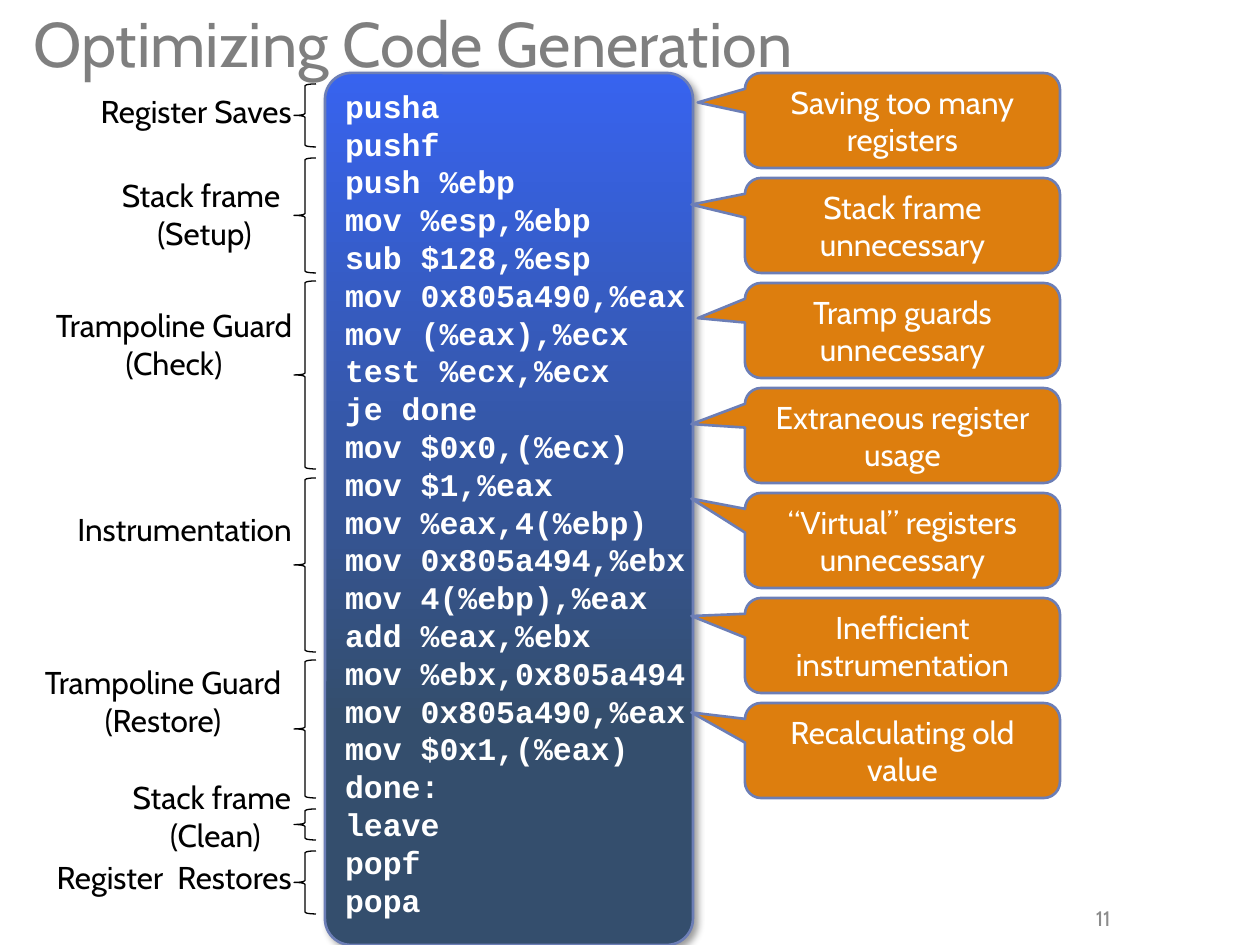
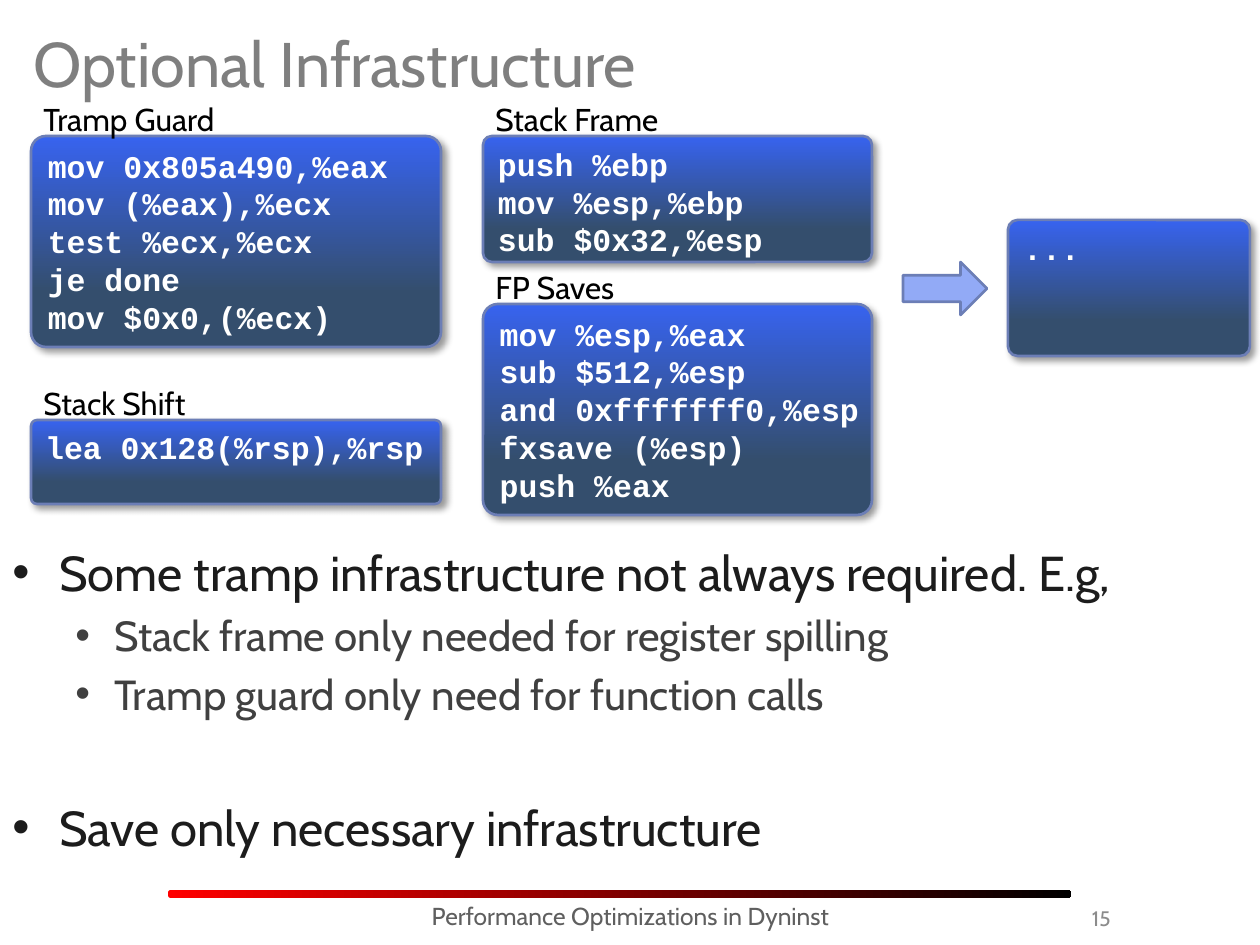
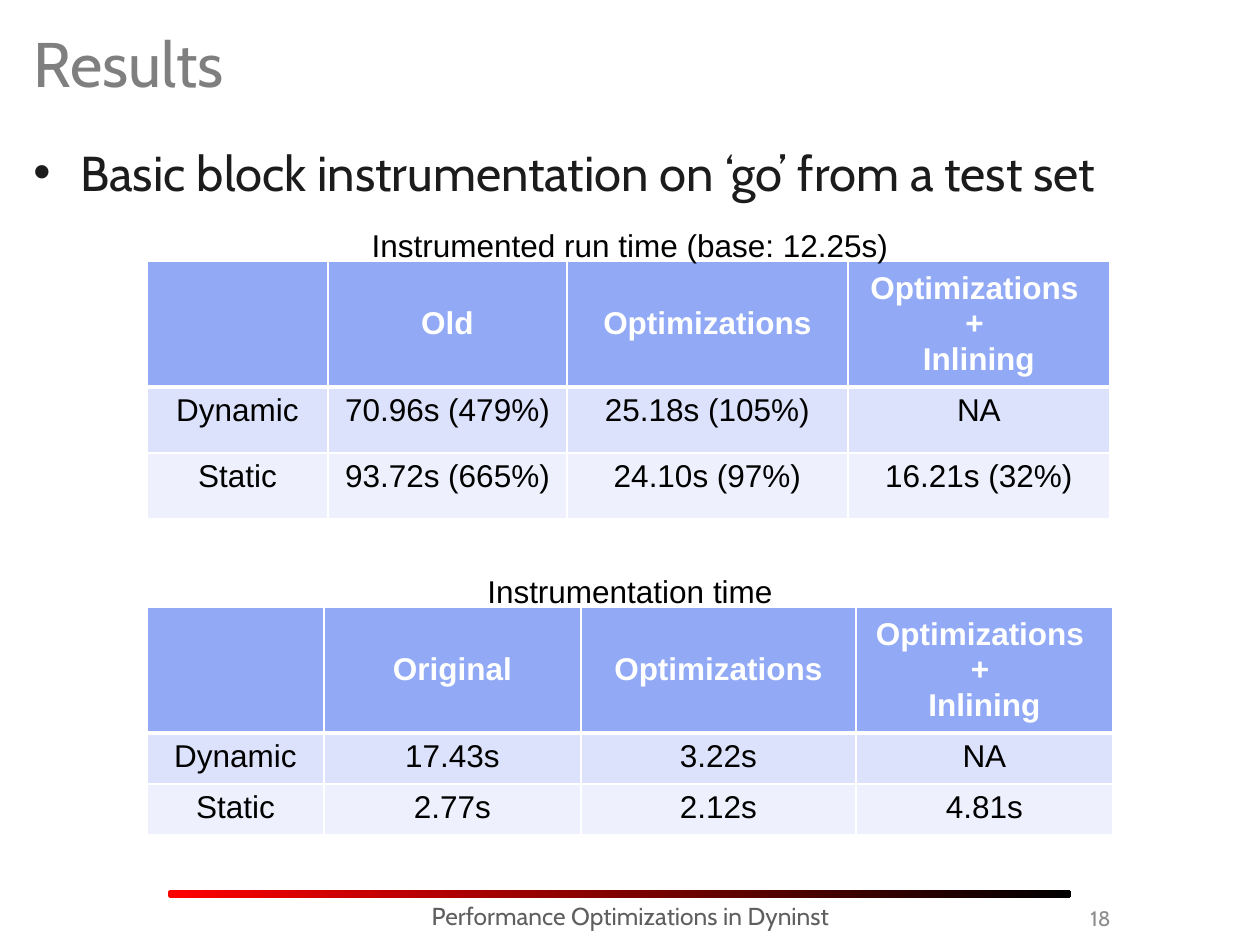
import pptx
import pptx.util
import pptx.dml.color
import pptx.enum.shapes
import pptx.enum.text
import pptx.oxml
import pptx.oxml.ns

EMU_PER_PX = 914400 / 126
SHAPES = pptx.enum.shapes.MSO_SHAPE
ALIGN = pptx.enum.text.PP_ALIGN
ANCHOR = pptx.enum.text.MSO_ANCHOR

BLACK, WHITE, OUTLINE, ORANGE = "000000", "FFFFFF", "6C7EB6", "DD7E0E"
HEADER_FILL, ROW_FILLS = "92AAF6", ("DCE2FB", "EEF1FD")
CODE_STOPS = ((0, "3763EF"), (0.74, "344E6D"))
BAR_STOPS = ((0, "FF0000"), (1, BLACK))

# Text formats: every key but color is a font attribute
TITLE = {"name": "Cabin", "size": 36, "color": "7F7F7F"}
NUMBER = {"name": "Cabin", "size": 12, "color": "8C8C8C"}
FOOTER = {"name": "Cabin", "size": 14, "color": "5F5F5F"}
LABEL = {"name": "Cabin", "size": 18, "color": BLACK}
CALLOUT = {**LABEL, "color": WHITE}
CODE = {"name": "Courier New", "size": 18, "bold": True, "color": WHITE}
TABLE_BODY = {"name": "Arial", "size": 18, "bold": False, "color": BLACK}
TABLE_HEADER = {**TABLE_BODY, "bold": True, "color": WHITE}
BULLETS = (
    {"name": "Cabin", "size": 28, "color": "1C1C1C"},
    {"name": "Cabin", "size": 24, "color": "404040"},
)
BULLET_INDENTS = ((47, 47), (102, 39))


def px(length):
    return pptx.util.Emu(round(length * EMU_PER_PX))


def color(hex_string):
    return pptx.dml.color.RGBColor.from_string(hex_string)


def draw_xml(tag, attributes="", content=""):
    namespace = pptx.oxml.ns.nsdecls("a")
    return pptx.oxml.parse_xml(f"<a:{tag} {namespace} {attributes}>{content}</a:{tag}>")


def add_run(paragraph, text, text_format):
    run = paragraph.add_run()
    run.text = text
    for name, value in text_format.items():
        if name == "color":
            run.font.color.rgb = color(value)
        else:
            setattr(run.font, name, pptx.util.Pt(value) if name == "size" else value)


def write_lines(frame, lines, text_format, align=ALIGN.LEFT):
    for index, line in enumerate(lines):
        paragraph = frame.add_paragraph() if index else frame.paragraphs[0]
        paragraph.alignment = align
        add_run(paragraph, line, text_format)


def add_text(slide, box, lines, text_format, align=ALIGN.LEFT, anchor=ANCHOR.TOP):
    frame = slide.shapes.add_textbox(*map(px, box)).text_frame
    frame.word_wrap = True
    frame.vertical_anchor = anchor
    write_lines(frame, lines, text_format, align)
    return frame


def add_shape(slide, kind, box, adjustments=(), fill=None, line=None, width=1.5):
    """Fill is a hex string, or None for no fill."""
    shape = slide.shapes.add_shape(kind, *map(px, box))
    shape.shadow.inherit = False
    for index, value in enumerate(adjustments):
        shape.adjustments[index] = value
    if fill:
        shape.fill.solid()
        shape.fill.fore_color.rgb = color(fill)
    else:
        shape.fill.background()
    if line:
        shape.line.color.rgb = color(line)
        shape.line.width = pptx.util.Pt(width)
    else:
        shape.line.fill.background()
    return shape


def fill_gradient(shape, stops, angle):
    shape.fill.gradient()
    shape.fill.gradient_angle = angle
    for stop, (position, hex_string) in zip(shape.fill.gradient_stops, stops):
        stop.position = position
        stop.color.rgb = color(hex_string)


# Shared slide parts
def start_slide(presentation, title, number, title_top=10, footer=True):
    slide = presentation.slides.add_slide(presentation.slide_layouts[6])
    if footer:
        bar = add_shape(slide, SHAPES.ROUNDED_RECTANGLE, (168, 890, 903, 8), (0.33,))
        fill_gradient(bar, BAR_STOPS, 0)
        add_text(slide, (305, 895, 651, 50), ["Performance Optimizations in Dyninst"],
                 FOOTER, ALIGN.CENTER)
    add_text(slide, (21, title_top, 1218, 105), [title], TITLE, anchor=ANCHOR.MIDDLE)
    add_text(slide, (955, 892, 168, 53), [str(number)], NUMBER, ALIGN.RIGHT, ANCHOR.MIDDLE)
    return slide


def add_code_box(slide, box, lines):
    shape = add_shape(slide, SHAPES.ROUNDED_RECTANGLE, box, (0.071,), line=OUTLINE)
    fill_gradient(shape, CODE_STOPS, 270)
    effects = shape._element.spPr.find(pptx.oxml.ns.qn("a:effectLst"))
    effects.append(draw_xml(
        "outerShdw", 'blurRad="50800" dist="38100" dir="2700000" algn="tl" rotWithShape="0"',
        f'<a:srgbClr val="{BLACK}"><a:alpha val="40000"/></a:srgbClr>'))
    frame = shape.text_frame
    frame.word_wrap = False
    frame.vertical_anchor = ANCHOR.TOP
    write_lines(frame, lines, CODE)


def add_bullets(slide, box, items):
    """Items are (level, text, points before)."""
    frame = add_text(slide, box, [], BULLETS[0])
    for index, (level, text, before) in enumerate(items):
        paragraph = frame.add_paragraph() if index else frame.paragraphs[0]
        margin, hanging = BULLET_INDENTS[level]
        properties = paragraph._p.get_or_add_pPr()
        properties.set("marL", str(px(margin)))
        properties.set("indent", str(-px(hanging)))
        properties.append(draw_xml("buFont", 'typeface="Arial"'))
        properties.append(draw_xml("buChar", 'char="•"'))
        paragraph.level = level
        paragraph.alignment = ALIGN.LEFT
        if before:
            paragraph.space_before = pptx.util.Pt(before)
        add_run(paragraph, text, BULLETS[level])


# Code generation slide
CODE_LINES = [
    "pusha", "pushf", "push %ebp", "mov %esp,%ebp", "sub $128,%esp",
    "mov 0x805a490,%eax", "mov (%eax),%ecx", "test %ecx,%ecx", "je done",
    "mov $0x0,(%ecx)", "mov $1,%eax", "mov %eax,4(%ebp)", "mov 0x805a494,%ebx",
    "mov 4(%ebp),%eax", "add %eax,%ebx", "mov %ebx,0x805a494", "mov 0x805a490,%eax",
    "mov $0x1,(%eax)", "done:", "leave", "popf", "popa",
]
# Brace top and height, label box, label lines
CODE_SECTIONS = [
    (84, 63, (10, 86, 294, 50), ["Register Saves"]),
    (158, 115, (105, 170, 199, 89), ["Stack frame ", "(Setup)"]),
    (281, 188, (32, 300, 284, 89), ["Trampoline Guard", "(Check)"]),
    (478, 174, (10, 504, 294, 50), ["Instrumentation"]),
    (660, 138, (21, 657, 284, 89), ["Trampoline Guard", "(Restore)"]),
    (809, 31, (116, 772, 199, 89), ["Stack frame ", "(Clean)"]),
    (851, 63, (10, 852, 294, 50), ["Register  Restores"]),
]
# Callout text and pointer tip as a share of the callout's size
CODE_PROBLEMS = [
    ("Saving too many registers", -0.65, -0.19),
    ("Stack frame unnecessary", -0.67, -0.22),
    ("Tramp guards unnecessary", -0.65, -0.13),
    ("Extraneous register usage", -0.67, -0.12),
    ("“Virtual” registers unnecessary", -0.67, -0.44),
    ("Inefficient instrumentation", -0.67, -0.31),
    ("Recalculating old value", -0.67, -0.4),
]


def add_sections(slide, left):
    for top, height, label_box, lines in CODE_SECTIONS:
        add_shape(slide, SHAPES.LEFT_BRACE, (left, top, 22, height), line=BLACK, width=0.75)
        align = ALIGN.CENTER if len(lines) > 1 else ALIGN.RIGHT
        add_text(slide, label_box, lines, LABEL, align)


def add_callouts(slide, left, top, width, height, pitch):
    for index, (text, tip_x, tip_y) in enumerate(CODE_PROBLEMS):
        shape = add_shape(slide, SHAPES.ROUNDED_RECTANGULAR_CALLOUT,
                          (left, top + index * pitch, width, height),
                          (tip_x, tip_y, 0.17), ORANGE, OUTLINE)
        shape.text_frame.word_wrap = True
        shape.text_frame.vertical_anchor = ANCHOR.MIDDLE
        write_lines(shape.text_frame, [text], CALLOUT, ALIGN.CENTER)


def build_code_slide(presentation):
    slide = start_slide(presentation, "Optimizing Code Generation", 11, -10, footer=False)
    add_code_box(slide, (325, 73, 368, 872), CODE_LINES)
    add_sections(slide, 294)
    add_callouts(slide, 745, 73, 315, 95, 105)


# Infrastructure slide: caption and code box
SNIPPETS = [
    ("Tramp Guard", (31, 136, 410, 211),
     ["mov 0x805a490,%eax", "mov (%eax),%ecx", "test %ecx,%ecx", "je done",
      "mov $0x0,(%ecx)"]),
    ("Stack Frame", (483, 136, 389, 126), ["push %ebp", "mov %esp,%ebp", "sub $0x32,%esp"]),
    ("FP Saves", (483, 304, 389, 211),
     ["mov %esp,%eax", "sub $512,%esp", "and 0xfffffff0,%esp", "fxsave (%esp)",
      "push %eax"]),
    ("Stack Shift", (31, 420, 410, 84), ["lea 0x128(%rsp),%rsp"]),
]


def add_snippet(slide, caption, box, lines):
    left, top, _, _ = box
    add_code_box(slide, box, lines)
    add_text(slide, (left, top - 42, 252, 50), [caption], LABEL)


def build_infrastructure_slide(presentation):
    slide = start_slide(presentation, "Optional Infrastructure", 15)
    add_bullets(slide, (0, 536, 1260, 305), [
        (0, "Some tramp infrastructure not always required. E.g,", 0),
        (1, "Stack frame only needed for register spilling", 4.8),
        (1, "Tramp guard only need for function calls", 4.8),
        (0, "Save only necessary infrastructure", 45),
    ])
    for snippet in SNIPPETS:
        add_snippet(slide, *snippet)
    add_code_box(slide, (1008, 220, 242, 136), ["..."])
    add_shape(slide, SHAPES.RIGHT_ARROW, (903, 262, 84, 53), fill=HEADER_FILL, line=OUTLINE)


# Results slide
def format_cell(cell, fill, top_width, bottom_width):
    cell.fill.solid()
    cell.fill.fore_color.rgb = color(fill)
    properties = cell._tc.get_or_add_tcPr()
    borders = (("lnL", 1), ("lnR", 1), ("lnT", top_width), ("lnB", bottom_width))
    for index, (tag, width) in enumerate(borders):
        properties.insert(index, draw_xml(
            tag, f'w="{pptx.util.Pt(width)}"',
            f'<a:solidFill><a:srgbClr val="{WHITE}"/></a:solidFill>'))


def add_results_table(slide, top, caption, columns, header_height, row_height, rows):
    left, width = 147, sum(columns)
    total_height = header_height + row_height * (len(rows) - 1)
    table = slide.shapes.add_table(
        len(rows), len(columns), *map(px, (left, top, width, total_height))).table
    for column, column_width in zip(table.columns, columns):
        column.width = px(column_width)
    for row_index, values in enumerate(rows):
        header = row_index == 0
        table.rows[row_index].height = px(header_height if header else row_height)
        fill = HEADER_FILL if header else ROW_FILLS[row_index - 1]
        for column_index, value in enumerate(values):
            cell = table.cell(row_index, column_index)
            format_cell(cell, fill, 3 if row_index == 1 else 1, 3 if header else 1)
            cell.vertical_anchor = ANCHOR.MIDDLE if header else ANCHOR.TOP
            if value:
                write_lines(cell.text_frame, value.split("\n"),
                            TABLE_HEADER if header else TABLE_BODY, ALIGN.CENTER)
    add_text(slide, (left, top - 41, 966, 50), [caption], TABLE_BODY, ALIGN.CENTER)


def build_results_slide(presentation):
    slide = start_slide(presentation, "Results", 18)
    combined = "Optimizations \n+ \nInlining"
    add_results_table(
        slide, 261, "Instrumented run time (base: 12.25s)", (181, 239, 281, 262), 118, 66, [
            ("", "Old", "Optimizations", combined),
            ("Dynamic", "70.96s (479%)", "25.18s (105%)", "NA"),
            ("Static", "93.72s (665%)", "24.10s (97%)", "16.21s (32%)"),
        ])
    add_results_table(
        slide, 607, "Instrumentation time", (177, 257, 275, 257), 118, 51, [
            ("", "Original", "Optimizations", combined),
            ("Dynamic", "17.43s", "3.22s", "NA"),
            ("Static", "2.77s", "2.12s", "4.81s"),
        ])
    add_bullets(slide, (21, 136, 1207, 262), [
        (0, "Basic block instrumentation on ‘go’ from a test set", 0),
    ])


def main():
    presentation = pptx.Presentation()
    presentation.slide_width = px(1260)
    presentation.slide_height = px(945)
    build_code_slide(presentation)
    build_infrastructure_slide(presentation)
    build_results_slide(presentation)
    presentation.save("out.pptx")


if __name__ == "__main__":
    main()
